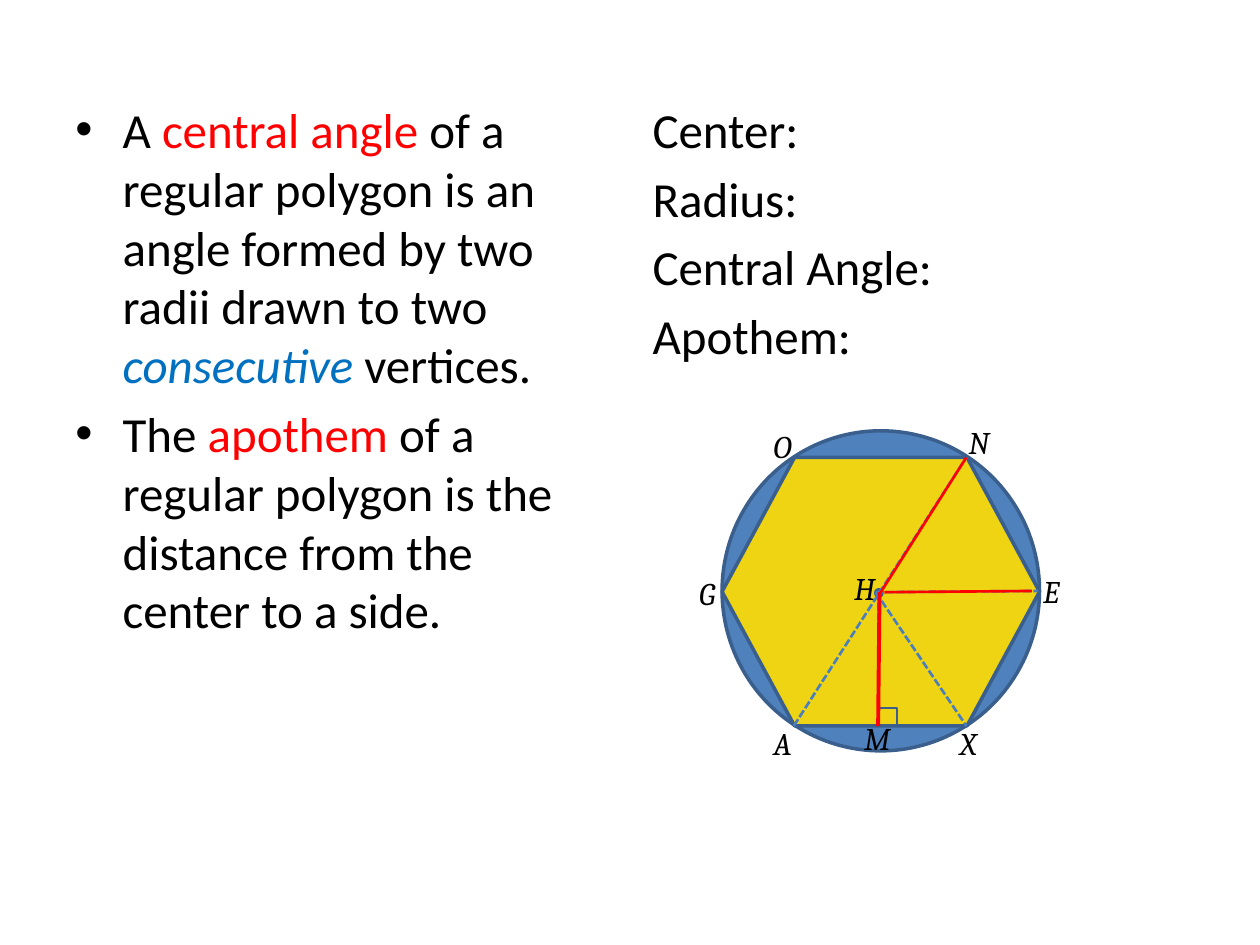
from lxml.etree import SubElement
from pptx import Presentation
from pptx.dml.color import RGBColor
from pptx.enum.dml import MSO_LINE as Dash
from pptx.enum.shapes import MSO_CONNECTOR as Link, MSO_SHAPE as Shape
from pptx.oxml.ns import qn
from pptx.util import Pt

BLACK = RGBColor(0, 0, 0)
RED = RGBColor(0xFF, 0, 0)
AZURE = RGBColor(0, 0x70, 0xC0)
BLUE = RGBColor(0x4F, 0x81, 0xBD)
NAVY = RGBColor(0x3A, 0x5F, 0x8C)
STEEL = RGBColor(0x4B, 0x7E, 0xBC)
GOLD = RGBColor(0xEE, 0xD4, 0x12)

# Each paragraph is a list of runs: text, colour, italic
TERMS = [
    [("A ", BLACK, False), ("central angle ", RED, False),
     ("of a regular polygon is an angle formed by two radii drawn to two ", BLACK, False),
     ("consecutive", AZURE, True), (" vertices.", BLACK, False)],
    [("The ", BLACK, False), ("apothem", RED, False),
     (" of a regular polygon is the distance from the center to a side.", BLACK, False)],
]
PARTS = [[(name, BLACK, False)]
         for name in ("Center:", "Radius:", "Central Angle:", "Apothem:")]

# Corner letters: left and top of each box
LETTERS = {
    "E": (589, 323.3), "H": (481, 321.8), "O": (434.9, 240.5), "G": (392.4, 324.7),
    "A": (434.9, 410.4), "X": (541.4, 410.4), "N": (546.5, 238.3), "M": (486.7, 407.5),
}

# Figure: left, top, width, height
CIRCLE = (412.6, 246.2, 181.4, 182.9)
HEXAGON = (412.6, 261.4, 181.4, 153.4)
DOT = (500.4, 337, 3.6, 3.6)
CORNER = (501.8, 404.7, 10.8, 10.1)

CENTER = (500.4, 338.4)
N, E, X, A = (552.2, 261.4), (593.3, 337.7), (552.2, 414.8), (453.6, 414.8)
M = (501.8, 414.8)
DASHED = [(A, N), (CENTER, E), (CENTER, X), ((501.8, 338.4), M)]
SOLID = [((503.3, 338.4), N, 1.5), ((505.4, 338.4), (589.7, 337.7), 1.5),
         ((502.6, 338.4), M, 2.25)]


def add_text(slide, paras, box, size=28, face="Calibri", indent=0, bullet=False, gap=0):
    frame = slide.shapes.add_textbox(*map(Pt, box)).text_frame
    frame.word_wrap = True
    for i, runs in enumerate(paras):
        para = frame.add_paragraph() if i else frame.paragraphs[0]
        props = para._p.get_or_add_pPr()
        if indent:
            props.set("marL", str(Pt(indent)))
            props.set("indent", str(-Pt(indent)))
        if bullet:
            SubElement(props, qn("a:buFont"), typeface="Arial")
            SubElement(props, qn("a:buChar"), char="•")
        if i:
            para.space_before = Pt(gap)
        for text, color, italic in runs:
            run = para.add_run()
            run.text = text
            font = run.font
            font.name, font.size, font.italic = face, Pt(size), italic
            font.color.rgb = color


def add_shape(slide, kind, box, fill=None, width=2):
    shape = slide.shapes.add_shape(kind, *map(Pt, box))
    shape.shadow.inherit = False
    if fill is None:
        shape.fill.background()
    else:
        shape.fill.solid()
        shape.fill.fore_color.rgb = fill
    shape.line.color.rgb = NAVY
    shape.line.width = Pt(width)
    return shape


def add_line(slide, start, end, color, width, dash=None):
    link = slide.shapes.add_connector(Link.STRAIGHT, *map(Pt, start + end))
    SubElement(link._element.spPr, qn("a:effectLst"))
    link.line.color.rgb = color
    link.line.width = Pt(width)
    if dash:
        link.line.dash_style = dash


def main():
    deck = Presentation()
    deck.slide_width, deck.slide_height = Pt(720), Pt(540)
    slide = deck.slides.add_slide(deck.slide_layouts[6])

    for left, paras, bullet in ((36, TERMS, True), (365.8, PARTS, False)):
        add_text(slide, paras, (left, 53.3, 318.2, 429.1),
                 indent=27, bullet=bullet, gap=5.6)

    add_shape(slide, Shape.OVAL, CIRCLE, BLUE)
    hexagon = add_shape(slide, Shape.HEXAGON, HEXAGON, GOLD)
    hexagon.adjustments[0] = 0.27
    add_shape(slide, Shape.OVAL, DOT, BLUE)
    for start, end in DASHED:
        add_line(slide, start, end, STEEL, 1.5, Dash.SQUARE_DOT)
    add_shape(slide, Shape.RECTANGLE, CORNER, width=1.5)
    for letter, spot in LETTERS.items():
        add_text(slide, [[(letter, BLACK, True)]], spot + (41, 29), size=18, face="Cambria")
    for start, end, width in SOLID:
        add_line(slide, start, end, RED, width)

    deck.save("out.pptx")


if __name__ == "__main__":
    main()
